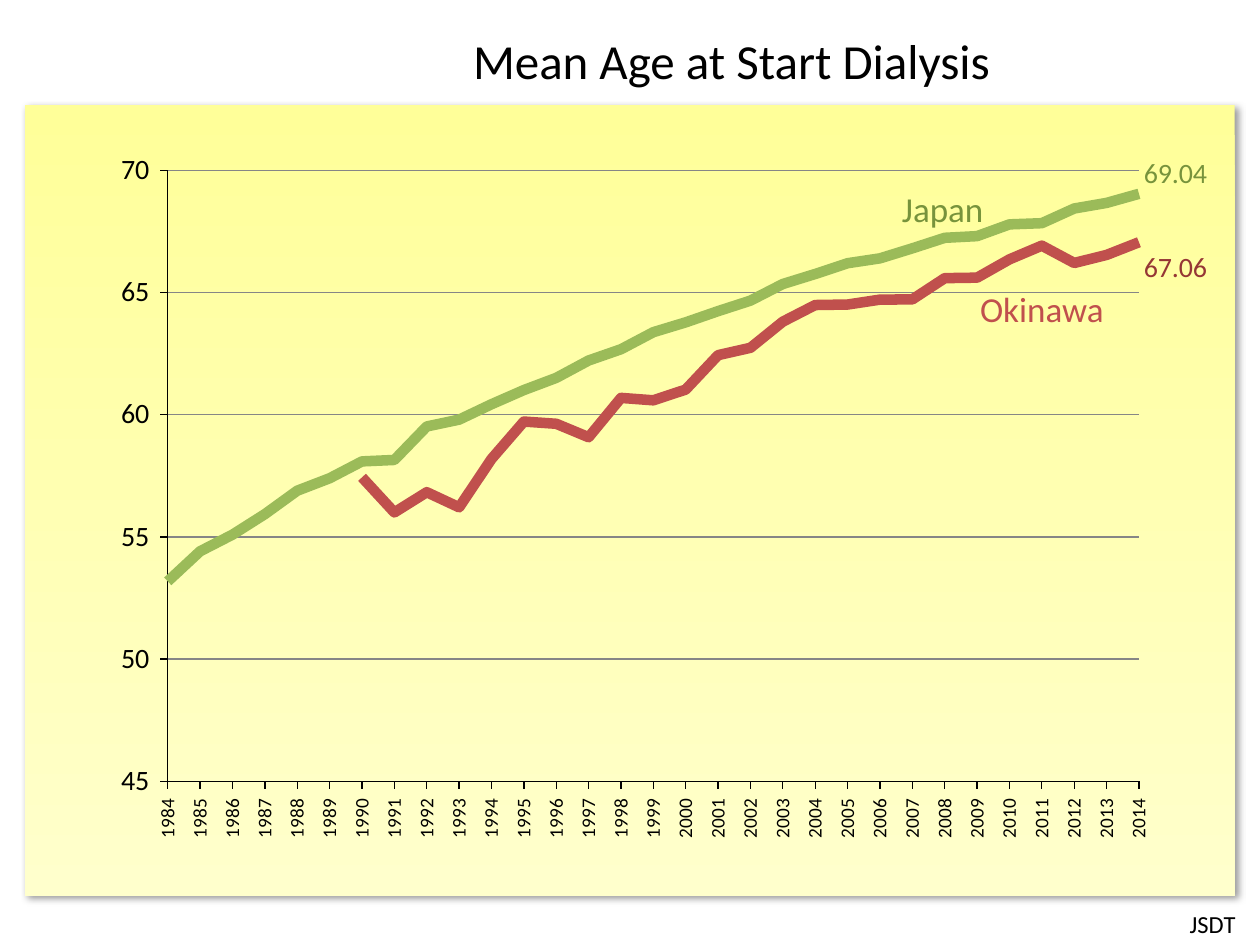
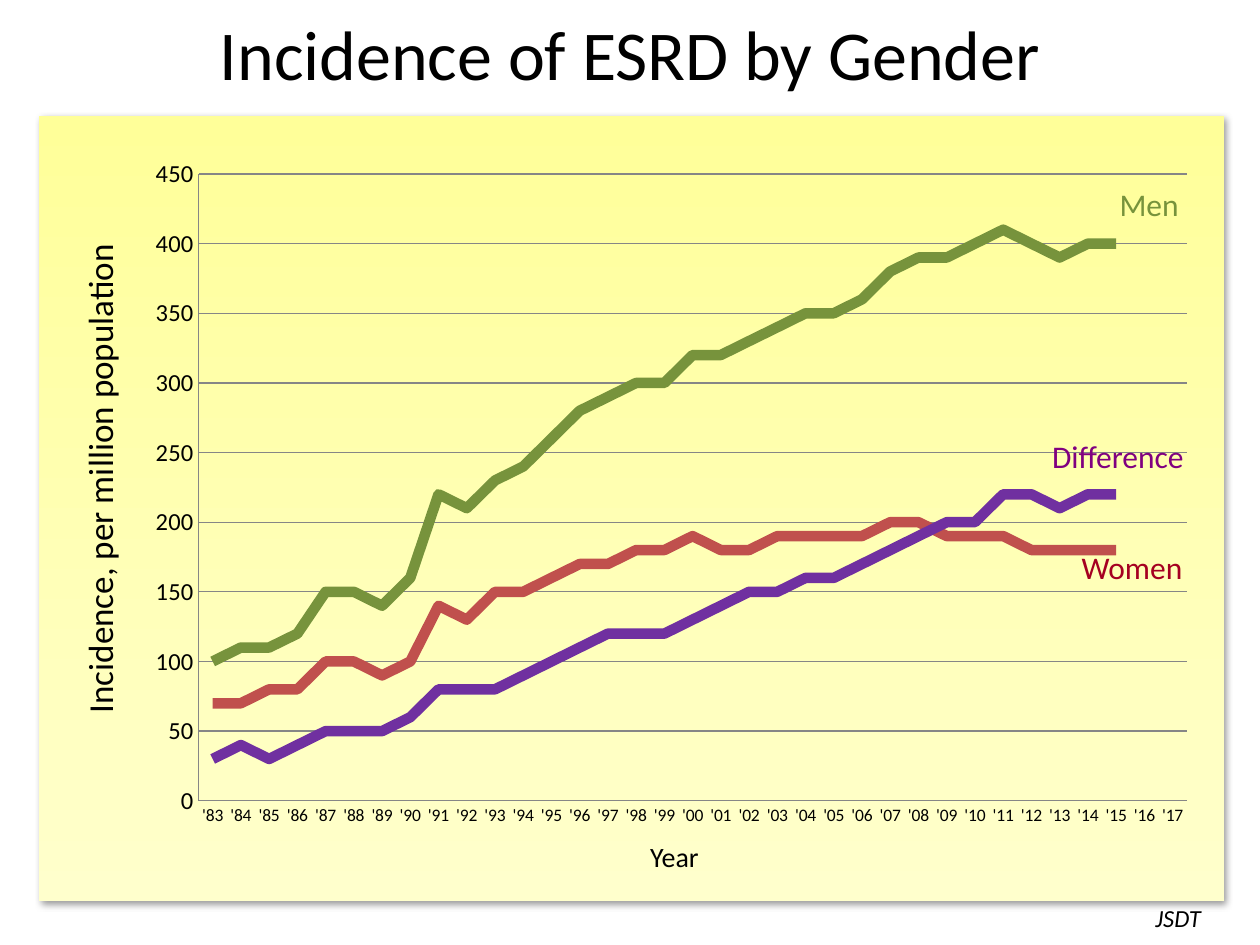
from dataclasses import dataclass

from lxml import etree
from pptx import Presentation, util as u
from pptx.chart.data import CategoryChartData
from pptx.dml.color import RGBColor
from pptx.enum import chart as charts, shapes, text
from pptx.oxml import parse_xml
from pptx.oxml.ns import nsdecls, qn


@dataclass(frozen=True)
class Theme:
    font: str = "Calibri"
    ink: str = "000000"
    grid: str = "868686"
    panel_top: str = "FFFF99"
    panel_bottom: str = "FFFFCC"
    green: str = "9BBB59"
    deep_green: str = "77933C"
    red: str = "C0504D"
    deep_red: str = "953735"
    crimson: str = "A50021"
    violet: str = "7030A0"
    purple: str = "800080"
    age_title_size: int = 28
    incidence_title_size: int = 40
    name_size: int = 20
    curve_name_size: int = 18
    value_size: int = 16
    source_size: int = 14
    curve_width: int = 6


THEME = Theme()
WIDTH, HEIGHT = u.Inches(10), u.Inches(7.5)

AGE_YEARS = [f"{year} " for year in range(1984, 2015)]
AGE_OKINAWA = [None] * 6 + [
    57.44, 56, 56.83, 56.21, 58.19, 59.72, 59.63, 59.08, 60.69, 60.59, 61.03, 62.44, 62.74,
    63.81, 64.49, 64.51, 64.71, 64.72, 65.59, 65.61, 66.36, 66.92, 66.21, 66.54, 67.06]
AGE_JAPAN = [
    53.18, 54.41, 55.09, 55.93, 56.89, 57.4, 58.09, 58.15, 59.52, 59.8, 60.43, 61.01, 61.51,
    62.22, 62.68, 63.38, 63.78, 64.24, 64.67, 65.35, 65.76, 66.2, 66.4, 66.81, 67.24, 67.31,
    67.79, 67.84, 68.44, 68.67, 69.04]

ESRD_YEARS = [f"'{year % 100:02d}" for year in range(1983, 2018)]
ESRD_MEN = [
    100, 110, 110, 120, 150, 150, 140, 160, 220, 210, 230, 240, 260, 280, 290, 300, 300,
    320, 320, 330, 340, 350, 350, 360, 380, 390, 390, 400, 410, 400, 390, 400, 400]
ESRD_WOMEN = [
    70, 70, 80, 80, 100, 100, 90, 100, 140, 130, 150, 150, 160, 170, 170, 180, 180,
    190, 180, 180, 190, 190, 190, 190, 200, 200, 190, 190, 190, 180, 180, 180, 180]
ESRD_DIFFERENCE = [
    30, 40, 30, 40, 50, 50, 50, 60, 80, 80, 80, 90, 100, 110, 120, 120, 120,
    130, 140, 150, 150, 160, 160, 170, 180, 190, 200, 200, 220, 220, 210, 220, 220]


def place(left, top, width, height):
    return (int(WIDTH * left / 100), int(HEIGHT * top / 100),
            int(WIDTH * width / 100), int(HEIGHT * height / 100))


def style_font(font, size, color=THEME.ink, italic=None):
    font.name = THEME.font
    font.size = u.Pt(size)
    font.italic = italic
    font.color.rgb = RGBColor.from_string(color)


def style_line(line, color, width):
    line.color.rgb = RGBColor.from_string(color)
    line.width = u.Pt(width)


def write(frame, wording, *, size, color=THEME.ink, italic=None, align=None,
          anchor=text.MSO_ANCHOR.TOP, wrap=False, inset=True):
    frame.word_wrap = wrap
    frame.auto_size = text.MSO_AUTO_SIZE.NONE
    frame.vertical_anchor = anchor
    if not inset:
        frame.margin_left = frame.margin_right = 0
        frame.margin_top = frame.margin_bottom = 0
    paragraph = frame.paragraphs[0]
    paragraph.alignment = align
    run = paragraph.add_run()
    run.text = wording
    style_font(run.font, size, color, italic)


def add_label(slide, wording, at, rotation=0, **look):
    label = slide.shapes.add_textbox(*place(*at))
    label.rotation = rotation
    write(label.text_frame, wording, **look)


def add_titled_slide(deck, wording, at, **look):
    slide = deck.slides.add_slide(deck.slide_layouts[5])
    heading = slide.shapes.title
    heading.left, heading.top, heading.width, heading.height = place(*at)
    write(heading.text_frame, wording, align=text.PP_ALIGN.CENTER, wrap=True, **look)
    return slide


def add_panel(slide, at):
    panel = slide.shapes.add_shape(shapes.MSO_SHAPE.RECTANGLE, *place(*at))
    panel.line.fill.background()
    panel.fill.gradient()
    panel.fill.gradient_angle = 270
    for stop, position, color in zip(panel.fill.gradient_stops, (0, 1),
                                     (THEME.panel_top, THEME.panel_bottom)):
        stop.position = position
        stop.color.rgb = RGBColor.from_string(color)
    panel.shadow.inherit = False
    effects = panel.element.spPr.find(qn("a:effectLst"))
    shade = etree.SubElement(effects, qn("a:outerShdw"), blurRad=str(u.Pt(4)),
                             dist=str(u.Pt(3)), dir="2700000", algn="tl", rotWithShape="0")
    black = etree.SubElement(shade, qn("a:srgbClr"), val=THEME.ink)
    etree.SubElement(black, qn("a:alpha"), val="40000")


def manual_layout(inner=False, **percents):
    target = '<c:layoutTarget val="inner"/>' if inner else ""
    modes = '<c:xMode val="edge"/><c:yMode val="edge"/>' if inner else ""
    sizes = "".join(f'<c:{key} val="{percent / 100}"/>' for key, percent in percents.items())
    return parse_xml(f'<c:layout {nsdecls("c")}><c:manualLayout>{target}{modes}{sizes}'
                     "</c:manualLayout></c:layout>")


def set_plot_area(chart, x, y, w, h):
    area = chart.element.xpath("c:chart/c:plotArea")[0]
    for layout in area.findall(qn("c:layout")):
        area.remove(layout)
    area.insert(0, manual_layout(inner=True, x=x, y=y, w=w, h=h))


def style_axis(axis, size, color, ticks):
    axis.major_tick_mark = ticks
    axis.minor_tick_mark = charts.XL_TICK_MARK.NONE
    style_font(axis.tick_labels.font, size)
    style_line(axis.format.line, color, 0.75)


def add_line_chart(slide, at, years, curves, *, scale, plot, year_size, value_size,
                   value_format, axis_color, ticks):
    data = CategoryChartData(number_format="General")
    data.categories = years
    for name, values, _ in curves:
        data.add_series(name, values + [None] * (len(years) - len(values)))
    chart = slide.shapes.add_chart(charts.XL_CHART_TYPE.LINE, *place(*at), data).chart
    chart.has_legend = chart.has_title = False
    style_font(chart.font, year_size)
    set_plot_area(chart, *plot)
    style_axis(chart.category_axis, year_size, axis_color, ticks)
    values_axis = chart.value_axis
    style_axis(values_axis, value_size, axis_color, ticks)
    values_axis.minimum_scale, values_axis.maximum_scale, values_axis.major_unit = scale
    values_axis.tick_labels.number_format = value_format
    values_axis.tick_labels.number_format_is_linked = False
    values_axis.has_major_gridlines = True
    style_line(values_axis.major_gridlines.format.line, THEME.grid, 0.75)
    chart.plots[0].vary_by_categories = False
    for curve, (_, _, color) in zip(chart.plots[0].series, curves):
        curve.smooth = False
        curve.marker.style = charts.XL_MARKER_STYLE.NONE
        style_line(curve.format.line, color, THEME.curve_width)
    return chart


def start_years_on_axis(chart):
    axis = chart.element.xpath(".//c:valAx")[0]
    for crossing in axis.findall(qn("c:crossBetween")):
        axis.remove(crossing)
    crossing = parse_xml(f'<c:crossBetween {nsdecls("c")} val="midCat"/>')
    axis.xpath("c:crossAx|c:crosses")[-1].addnext(crossing)


def turn_years(chart):
    body = chart.element.xpath(".//c:catAx/c:txPr/a:bodyPr")[0]
    body.set("rot", "-5400000")
    body.set("vert", "horz")


def label_last_point(chart, index, color, shift):
    curve = chart.plots[0].series[index]
    last = curve.points[len(AGE_YEARS) - 1].data_label
    style_font(last.font, THEME.value_size, color)
    last.position = charts.XL_LABEL_POSITION.RIGHT
    entry = chart.element.xpath(".//c:ser")[index].xpath(".//c:dLbl")[0]
    entry.insert(1, manual_layout(x=0, y=shift))


def build_mean_age(deck):
    slide = add_titled_slide(deck, "Mean Age at Start Dialysis", (16.1, 0.53, 83.9, 11.6),
                             size=THEME.age_title_size, anchor=text.MSO_ANCHOR.MIDDLE)
    add_panel(slide, (2, 11.07, 96, 83.73))
    chart = add_line_chart(
        slide, (5.1, 14.67, 90.8, 78.27), AGE_YEARS,
        [("Okinawa", AGE_OKINAWA, THEME.red), ("Japan", AGE_JAPAN, THEME.green)],
        scale=(45, 70, 5), plot=(9.05, 4.3, 84.9, 82.6), year_size=11,
        value_size=THEME.value_size, value_format="0_ ",
        axis_color=THEME.ink, ticks=charts.XL_TICK_MARK.OUTSIDE)
    start_years_on_axis(chart)
    turn_years(chart)
    label_last_point(chart, 0, THEME.deep_red, 3.5)
    label_last_point(chart, 1, THEME.deep_green, -2.7)
    add_label(slide, "Japan", (70.6, 19.2, 8.7, 5.87), size=THEME.name_size,
              color=THEME.deep_green)
    add_label(slide, "Okinawa", (76.8, 29.73, 12.3, 5.87), size=THEME.name_size,
              color=THEME.red)
    add_label(slide, "JSDT", (93.35, 95.53, 5.7, 4.53), size=THEME.source_size,
              align=text.PP_ALIGN.RIGHT)


def build_incidence(deck):
    slide = add_titled_slide(deck, "Incidence of ESRD by Gender", (0, 1.07, 100, 8.93),
                             size=THEME.incidence_title_size, inset=False)
    add_panel(slide, (3.1, 12.27, 94.05, 83.07))
    add_line_chart(
        slide, (10.6, 15.33, 85.3, 73.47), ESRD_YEARS,
        [("Men", ESRD_MEN, THEME.deep_green), ("Women", ESRD_WOMEN, THEME.red),
         ("Difference", ESRD_DIFFERENCE, THEME.violet)],
        scale=(0, 450, 50), plot=(6.05, 4.2, 91.95, 90.3), year_size=10, value_size=14,
        value_format="0", axis_color=THEME.grid, ticks=charts.XL_TICK_MARK.NONE)
    add_label(slide, "Incidence, per million population", (-12.2, 47.07, 40.2, 5.87),
              rotation=270, size=THEME.name_size, wrap=True)
    add_label(slide, "JSDT", (91.7, 95.6, 5.8, 3.2), size=THEME.source_size, italic=True,
              wrap=True, inset=False)
    for wording, at, size, color in (
            ("Men", (88.85, 19.6, 4.8, 4), THEME.curve_name_size, THEME.deep_green),
            ("Women", (85.85, 58, 8.1, 4), THEME.curve_name_size, THEME.crimson),
            ("Difference", (83.5, 46.27, 10.6, 4), THEME.curve_name_size, THEME.purple),
            ("Year", (51.6, 88.8, 4, 3.6), THEME.value_size, THEME.ink)):
        add_label(slide, wording, at, size=size, color=color, inset=False)


def main():
    deck = Presentation()
    deck.slide_width, deck.slide_height = WIDTH, HEIGHT
    build_mean_age(deck)
    build_incidence(deck)
    deck.save("out.pptx")


if __name__ == "__main__":
    main()
